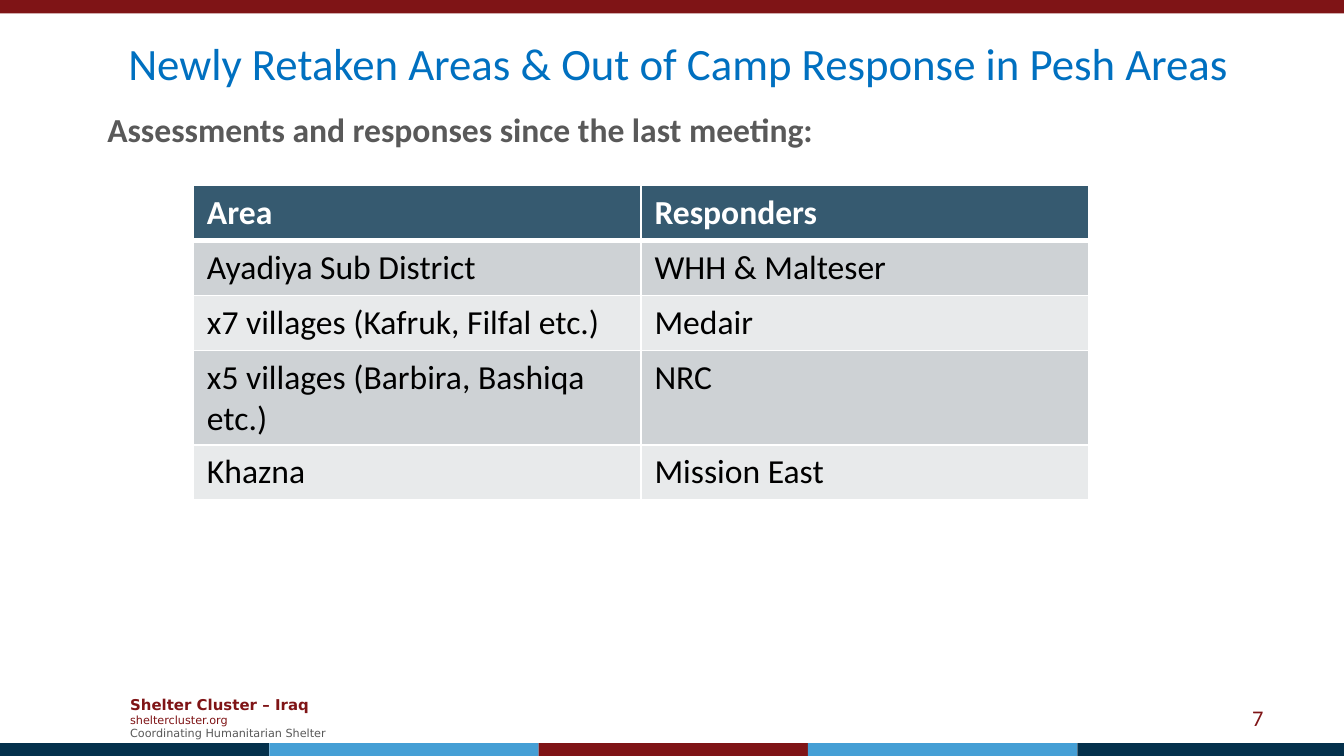
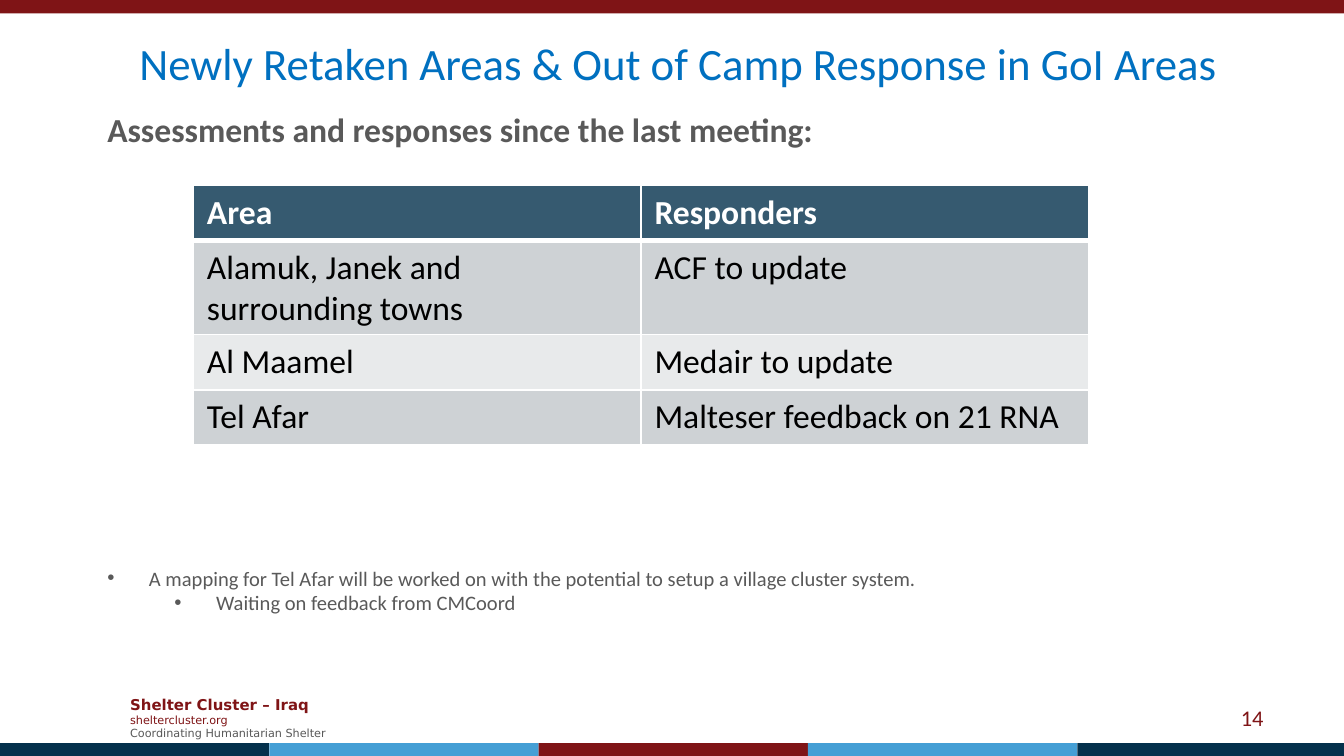
from dataclasses import dataclass
from typing import Any

from lxml import etree
from pptx import Presentation
from pptx.dml.color import RGBColor
from pptx.enum.shapes import MSO_SHAPE
from pptx.enum.text import MSO_ANCHOR, MSO_AUTO_SIZE, PP_ALIGN
from pptx.oxml.ns import qn
from pptx.util import Inches, Pt

RECTANGLE = MSO_SHAPE.RECTANGLE
TOP, MIDDLE = MSO_ANCHOR.TOP, MSO_ANCHOR.MIDDLE
GROW, FIXED = MSO_AUTO_SIZE.SHAPE_TO_FIT_TEXT, MSO_AUTO_SIZE.NONE
LEFT, CENTER, RIGHT = PP_ALIGN.LEFT, PP_ALIGN.CENTER, PP_ALIGN.RIGHT

MAROON = RGBColor(0x7F, 0x14, 0x16)
NAVY = RGBColor(0x04, 0x31, 0x4C)
SKY = RGBColor(0x45, 0x9F, 0xD5)
TITLE_BLUE = RGBColor(0x00, 0x70, 0xC0)
GREY = RGBColor(0x59, 0x59, 0x59)
WHITE = RGBColor(0xFF, 0xFF, 0xFF)
BLACK = RGBColor(0x00, 0x00, 0x00)
HEADER_FILL = RGBColor(0x36, 0x5A, 0x70)
ROW_FILLS = (RGBColor(0xCE, 0xD2, 0xD5), RGBColor(0xE8, 0xEA, 0xEB))

SLIDE_WIDTH = 10
SLIDE_HEIGHT = SLIDE_WIDTH * 9 / 16
BAND_HEIGHT = 0.1
FOOTER_TOP = 5.53
FOOTER_SPAN = 10.02
FOOTER_COLORS = (NAVY, SKY, MAROON, SKY, NAVY)
COLUMN_WIDTH, ROW_HEIGHT = 3.33, 0.41
BULLET_HANG, LEVEL_STEP = 0.31, 0.5


@dataclass(frozen=True)
class Style:
    size: float
    color: RGBColor
    bold: bool = False
    name: str = "Calibri"


@dataclass(frozen=True)
class Line:
    text: str
    style: Style
    align: Any = LEFT
    bullet_level: int | None = None


@dataclass(frozen=True)
class Area:
    left: float
    top: float
    width: float
    height: float

    def lengths(self) -> tuple:
        return tuple(Inches(v) for v in (self.left, self.top, self.width, self.height))


@dataclass(frozen=True)
class ResponsePage:
    number: int
    region: str
    responses: tuple[tuple[str, str], ...]
    notes: tuple[str, ...] = ()


TITLE = Style(24, TITLE_BLUE)
SUBTITLE = Style(18, GREY, True)
NOTE = Style(11, GREY)
PAGE_NUMBER = Style(12, MAROON)
TABLE_HEADER = Style(18, WHITE, True)
TABLE_BODY = Style(18, BLACK)

FOOTER_LINES = (
    Line("Shelter Cluster – Iraq", Style(8, MAROON, True, "DejaVu Sans")),
    Line("sheltercluster.org", Style(6, MAROON, name="DejaVu Sans")),
    Line("Coordinating Humanitarian Shelter", Style(6, GREY, name="DejaVu Sans")),
)

PAGES = (
    ResponsePage(
        7,
        "Pesh",
        (
            ("Ayadiya Sub District", "WHH & Malteser"),
            ("x7 villages (Kafruk, Filfal etc.)", "Medair"),
            ("x5 villages (Barbira, Bashiqa etc.)", "NRC"),
            ("Khazna", "Mission East"),
        ),
    ),
    ResponsePage(
        14,
        "GoI",
        (
            ("Alamuk, Janek and surrounding towns", "ACF to update"),
            ("Al Maamel", "Medair to update"),
            ("Tel Afar", "Malteser feedback on 21 RNA"),
        ),
        (
            "A mapping for Tel Afar will be worked on with the potential to setup a village cluster system.",
            "Waiting on feedback from CMCoord",
        ),
    ),
)


def add_bullet(para: Any, level: int) -> None:
    para.level = level
    properties = para._p.get_or_add_pPr()
    properties.set("marL", str(Inches(BULLET_HANG + level * LEVEL_STEP)))
    properties.set("indent", str(-Inches(BULLET_HANG)))
    etree.SubElement(properties, qn("a:buFont")).set("typeface", "Arial")
    etree.SubElement(properties, qn("a:buChar")).set("char", "•")


def write_line(para: Any, line: Line) -> None:
    if line.bullet_level is not None:
        add_bullet(para, line.bullet_level)
    para.alignment = line.align
    span = para.add_run()
    span.text = line.text
    style = line.style
    formats = {"size": Pt(style.size), "bold": style.bold, "name": style.name}
    for attribute, value in formats.items():
        setattr(span.font, attribute, value)
    span.font.color.rgb = style.color


def add_text(page: Any, area: Area, lines: tuple[Line, ...], anchor: Any = TOP, fit: Any = GROW) -> None:
    frame = page.shapes.add_textbox(*area.lengths()).text_frame
    formats = {"word_wrap": True, "auto_size": fit, "vertical_anchor": anchor}
    for attribute, value in formats.items():
        setattr(frame, attribute, value)
    for index, line in enumerate(lines):
        write_line(frame.add_paragraph() if index else frame.paragraphs[0], line)


def add_band(page: Any, area: Area, color: RGBColor) -> None:
    band = page.shapes.add_shape(RECTANGLE, *area.lengths())
    band.shadow.inherit = False
    band.fill.solid()
    band.fill.fore_color.rgb = color
    band.line.fill.background()


def add_borders(cell: Any, bottom: float) -> None:
    properties = cell._tc.get_or_add_tcPr()
    for side, width in {"L": 1, "R": 1, "T": 1, "B": bottom}.items():
        border = etree.SubElement(properties, qn(f"a:ln{side}"), w=str(Pt(width)))
        fill = etree.SubElement(border, qn("a:solidFill"))
        etree.SubElement(fill, qn("a:srgbClr"), val=str(WHITE))


def add_response_table(page: Any, responses: tuple[tuple[str, str], ...]) -> None:
    rows = (("Area", "Responders"), *responses)
    area = Area(1.44, 1.38, 2 * COLUMN_WIDTH, ROW_HEIGHT * len(rows))
    table = page.shapes.add_table(len(rows), 2, *area.lengths()).table
    table.horz_banding = False
    for row_index, texts in enumerate(rows):
        header = row_index == 0
        for column_index, text in enumerate(texts):
            cell = table.cell(row_index, column_index)
            add_borders(cell, 3 if header else 1)
            cell.fill.solid()
            cell.fill.fore_color.rgb = HEADER_FILL if header else ROW_FILLS[(row_index - 1) % 2]
            write_line(cell.text_frame.paragraphs[0], Line(text, TABLE_HEADER if header else TABLE_BODY))


def add_frame(page: Any, number: int) -> None:
    add_text(page, Area(0.87, 5.12, 1.73, 0.44), FOOTER_LINES, MIDDLE)
    add_band(page, Area(0, 0, SLIDE_WIDTH, BAND_HEIGHT), MAROON)
    width = FOOTER_SPAN / len(FOOTER_COLORS)
    for index, color in enumerate(FOOTER_COLORS):
        add_band(page, Area(index * width, FOOTER_TOP, width, BAND_HEIGHT), color)
    add_text(page, Area(7.17, 5.19, 2.33, 0.3), (Line(str(number), PAGE_NUMBER, RIGHT),), MIDDLE, FIXED)


def add_response_page(deck: Any, content: ResponsePage) -> None:
    page = deck.slides.add_slide(deck.slide_layouts[6])
    add_frame(page, content.number)
    title = f"Newly Retaken Areas & Out of Camp Response in {content.region} Areas"
    add_text(page, Area(0.59, 0.22, 8.91, 0.5), (Line(title, TITLE, CENTER),))
    subtitle = Line("Assessments and responses since the last meeting:", SUBTITLE)
    add_text(page, Area(0.7, 0.76, 8.14, 0.4), (subtitle,))
    add_response_table(page, content.responses)
    if content.notes:
        notes = tuple(Line(text, NOTE, LEFT, level) for level, text in enumerate(content.notes))
        add_text(page, Area(0.7, 4.16, 7.73, 0.47), notes)


def main() -> None:
    deck = Presentation()
    deck.slide_width, deck.slide_height = Inches(SLIDE_WIDTH), Inches(SLIDE_HEIGHT)
    for content in PAGES:
        add_response_page(deck, content)
    deck.save("out.pptx")


if __name__ == "__main__":
    main()
